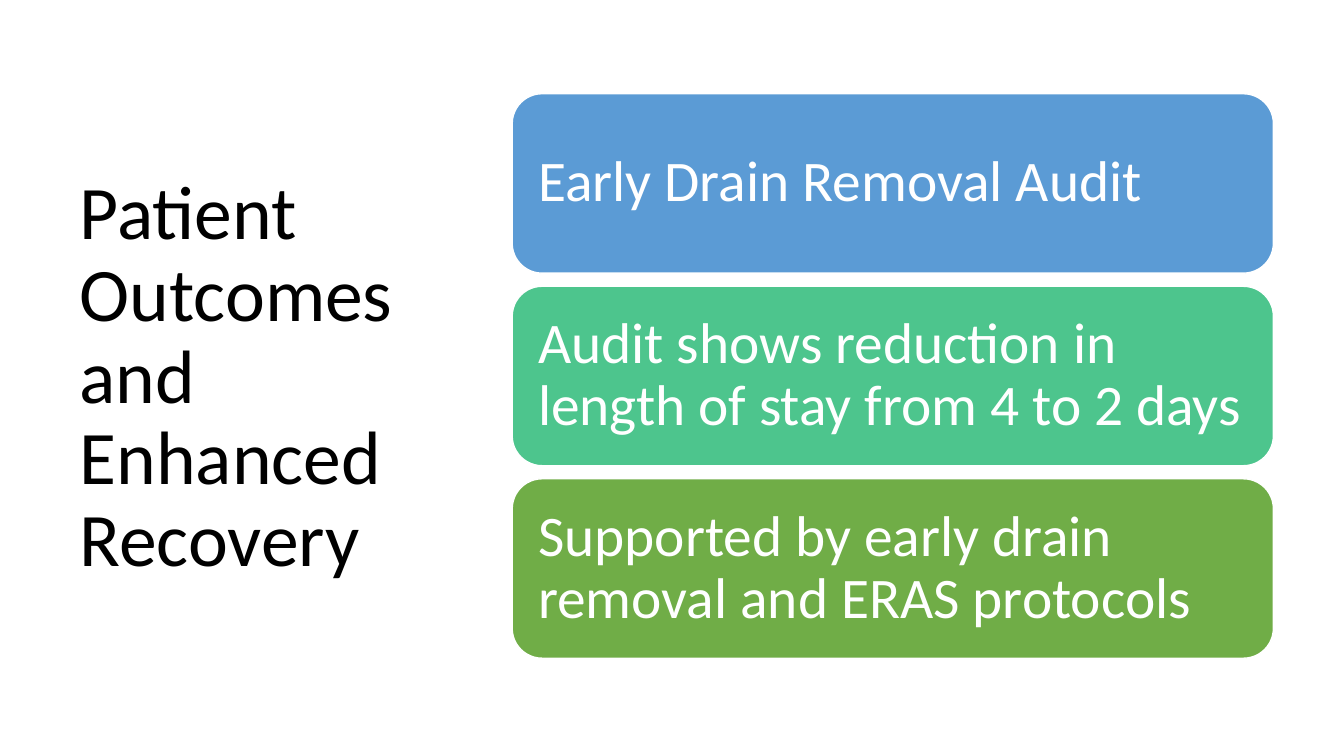
"""Build a slide with a title beside three stacked message cards."""
from pptx import Presentation
from pptx.dml.color import RGBColor
from pptx.enum.shapes import MSO_SHAPE
from pptx.enum.text import MSO_ANCHOR, MSO_AUTO_SIZE, PP_ALIGN
from pptx.util import Inches, Pt

ROUNDED = MSO_SHAPE.ROUNDED_RECTANGLE
MIDDLE = MSO_ANCHOR.MIDDLE
LEFT = PP_ALIGN.LEFT
NO_FIT = MSO_AUTO_SIZE.NONE

SLIDE_WIDTH, SLIDE_HEIGHT = 13.33, 7.5
CARD_LEFT, CARD_TOP = 5.08, 0.93
CARD_WIDTH, CARD_HEIGHT = 7.55, 1.78
ROW_STEP = 1.91
CARD_INSET = 0.17
FONT = "Calibri"
COLORS = {
    "title": "000000",
    "white": "FFFFFF",
    "blue": "5B9BD5",
    "teal": "4DC58D",
    "green": "70AD47",
}
MESSAGES = [
    ("Early Drain Removal Audit", "blue"),
    ("Audit shows reduction in length of stay from 4 to 2 days", "teal"),
    ("Supported by early drain removal and ERAS protocols", "green"),
]


def color(name):
    """Return the named palette colour."""
    return RGBColor.from_string(COLORS[name])


def write_text(frame, wording, size, color_name):
    """Write one left-aligned, vertically centred paragraph."""
    frame.word_wrap = True
    frame.auto_size = NO_FIT
    frame.vertical_anchor = MIDDLE
    paragraph = frame.paragraphs[0]
    paragraph.alignment = LEFT
    paragraph.line_spacing = 0.9
    run = paragraph.add_run()
    run.text = wording
    run.font.name = FONT
    run.font.size = Pt(size)
    run.font.color.rgb = color(color_name)


def place_title(slide, wording):
    """Move and format the title placeholder in the left column."""
    title = slide.shapes.title
    title.left, title.top = Inches(0.69), Inches(0.7)
    title.width, title.height = Inches(3.74), Inches(6.11)
    write_text(title.text_frame, wording, 54, "title")


def add_card(slide, row, message, fill_name):
    """Add a rounded message card in the given row."""
    card = slide.shapes.add_shape(
        ROUNDED,
        Inches(CARD_LEFT),
        Inches(CARD_TOP + row * ROW_STEP),
        Inches(CARD_WIDTH),
        Inches(CARD_HEIGHT),
    )
    card.shadow.inherit = False
    card.fill.solid()
    card.fill.fore_color.rgb = color(fill_name)
    card.line.color.rgb = color("white")
    card.line.width = Pt(1)
    frame = card.text_frame
    frame.margin_left = frame.margin_right = Inches(CARD_INSET)
    frame.margin_top = frame.margin_bottom = Inches(CARD_INSET)
    write_text(frame, message, 41, "white")


def main():
    """Create and save the presentation."""
    presentation = Presentation()
    presentation.slide_width = Inches(SLIDE_WIDTH)
    presentation.slide_height = Inches(SLIDE_HEIGHT)
    title_only = presentation.slide_layouts.get_by_name("Title Only")
    slide = presentation.slides.add_slide(title_only)
    place_title(slide, "Patient Outcomes and Enhanced Recovery")
    for row, (message, fill_name) in enumerate(MESSAGES):
        add_card(slide, row, message, fill_name)
    presentation.save("out.pptx")


if __name__ == "__main__":
    main()
